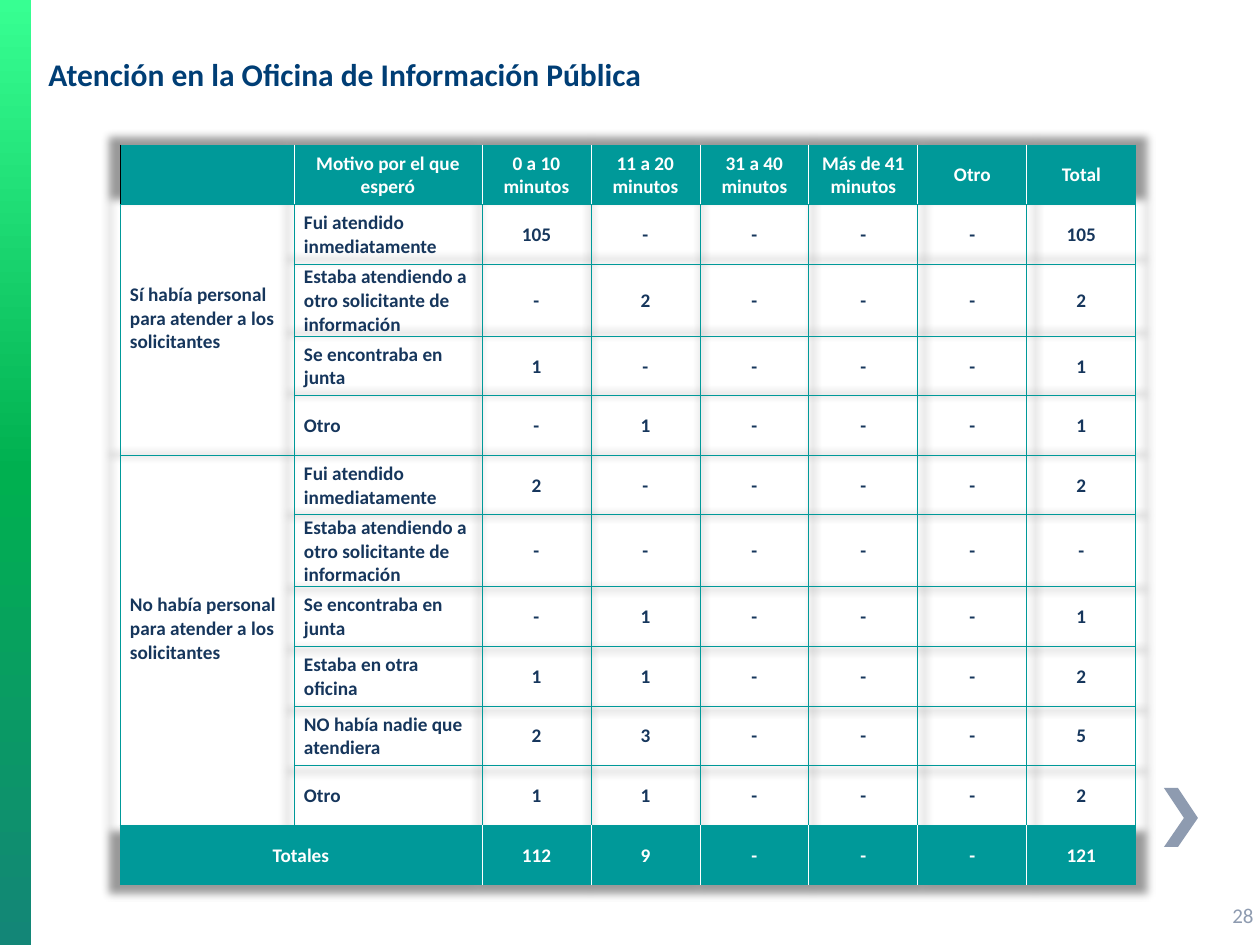
import lxml.etree
import pptx
import pptx.dml.color
import pptx.enum.text
import pptx.oxml
import pptx.oxml.ns
import pptx.util

PX = 9144000 // 1260
COLORS = {"teal": "009999", "white": "FFFFFF", "black": "000000", "navy": "16365C",
          "title": "003E75", "muted": "8E9BB0"}
BAND = [(0, "37FF92"), (50, "00B050"), (100, "138677")]
FONT = "Calibri"
NS = pptx.oxml.ns.nsdecls("a")
MIDDLE = pptx.enum.text.MSO_ANCHOR.MIDDLE
CENTER = pptx.enum.text.PP_ALIGN.CENTER

HEADERS = ["", "Motivo por el que esperó", "0 a 10 minutos", "11 a 20 minutos",
           "31 a 40 minutos", "Más de 41 minutos", "Otro", "Total"]
# Each group: label, then (reason, 0-10 min, 11-20 min, total)
GROUPS = [
    ("Sí había personal para atender a los solicitantes", [
        ("Fui atendido inmediatamente", "105", "-", "105"),
        ("Estaba atendiendo a otro solicitante de información", "-", "2", "2"),
        ("Se encontraba en junta", "1", "-", "1"),
        ("Otro", "-", "1", "1")]),
    ("No había personal para atender a los solicitantes", [
        ("Fui atendido inmediatamente", "2", "-", "2"),
        ("Estaba atendiendo a otro solicitante de información", "-", "-", "-"),
        ("Se encontraba en junta", "-", "1", "1"),
        ("Estaba en otra oficina", "1", "1", "2"),
        ("NO había nadie que atendiera", "2", "3", "5"),
        ("Otro", "1", "1", "2")]),
]
TOTALS = ("Totales", "", "112", "9", "-", "-", "-", "121")
COL_WIDTHS = [174, 188] + [109] * 6


def rgb(name):
    return pptx.dml.color.RGBColor.from_string(COLORS[name])


def style(p, size, color, bold=False):
    for r in p.runs:
        r.font.name, r.font.size, r.font.bold = FONT, pptx.util.Pt(size), bold
        r.font.color.rgb = rgb(color)


def add_text(s, box, text, size, color, bold=False):
    tf = s.shapes.add_textbox(*[v * PX for v in box]).text_frame
    tf.word_wrap = True
    tf.vertical_anchor = MIDDLE
    tf.text = text
    style(tf.paragraphs[0], size, color, bold)


def add_band(s, box):
    """Vertical gradient strip on the left edge."""
    sp = s.shapes.add_shape(pptx.enum.shapes.MSO_SHAPE.RECTANGLE, *[v * PX for v in box])
    sp.shadow.inherit = False
    sp.line.fill.background()
    stops = "".join(f'<a:gs pos="{pos * 1000}"><a:srgbClr val="{c}"/></a:gs>' for pos, c in BAND)
    fill = pptx.oxml.parse_xml(f'<a:gradFill {NS}><a:gsLst>{stops}</a:gsLst>'
                               '<a:lin ang="5400000" scaled="0"/></a:gradFill>')
    sp.element.spPr.find(pptx.oxml.ns.qn("a:prstGeom")).addnext(fill)


def add_chevron(s, box):
    x, y, w, h = box
    arm = 14
    points = [(x, y), (x + w - arm, y + h / 2), (x, y + h), (x + arm, y + h), (x + w, y + h / 2)]
    fb = s.shapes.build_freeform(x + arm, y, scale=PX)
    fb.add_line_segments(points, close=True)
    sp = fb.convert_to_shape()
    sp.shadow.inherit = False
    sp.fill.solid()
    sp.fill.fore_color.rgb = rgb("muted")
    sp.line.fill.background()


def set_borders(cell, left, right):
    tcPr = cell._tc.get_or_add_tcPr()
    sides = {"lnL": left, "lnR": right, "lnT": "teal", "lnB": "teal"}
    for i, (side, color) in enumerate(sides.items()):
        tcPr.insert(i, pptx.oxml.parse_xml(
            f'<a:{side} {NS} w="6350"><a:solidFill><a:srgbClr val="{COLORS[color]}"/>'
            f'</a:solidFill></a:{side}>'))


def fill_cell(cell, text, col, strong, grouped):
    centred = strong or col > 1
    cell.margin_left = cell.margin_right = (1 if centred else 10) * PX
    cell.margin_top = PX
    cell.margin_bottom = 24 * PX if grouped else 0  # group labels sit one half line high
    cell.vertical_anchor = MIDDLE
    cell.text = text
    p = cell.text_frame.paragraphs[0]
    if centred:
        p.alignment = CENTER
    style(p, 11, "white" if strong else "navy", True)
    if strong:
        cell.fill.solid()
        cell.fill.fore_color.rgb = rgb("teal")
    else:
        cell.fill.background()


def add_waiting_table(s, box):
    rows = [HEADERS]
    for label, reasons in GROUPS:
        for i, (reason, short, medium, total) in enumerate(reasons):
            rows.append([label if i == 0 else "", reason, short, medium, "-", "-", "-", total])
    rows.append(TOTALS)
    last, last_col = len(rows) - 1, len(HEADERS) - 1

    table = s.shapes.add_table(len(rows), len(HEADERS), *[v * PX for v in box]).table
    table.first_row = table.horz_banding = False
    for column, width in zip(table.columns, COL_WIDTHS):
        column.width = width * PX
    # Three-line rows are 72 px; the others share what is left
    tall = [r for r, row in enumerate(rows) if len(row[1]) > 40]
    for r, row in enumerate(table.rows):
        row.height = 72 * PX if r in tall else (box[3] - 72 * len(tall)) * PX // (len(rows) - len(tall))

    for r, values in enumerate(rows):
        strong = r in (0, last)
        inner = "white" if strong else "teal"
        for c, text in enumerate(values):
            cell = table.cell(r, c)
            fill_cell(cell, text, c, strong, c == 0 and not strong)
            left = "black" if r == c == 0 else "teal" if c == 0 else inner
            set_borders(cell, left, "teal" if c == last_col else inner)

    # Merged group labels and totals label
    top = 1
    for _, reasons in GROUPS:
        table.cell(top, 0).merge(table.cell(top + len(reasons) - 1, 0))
        top += len(reasons)
    table.cell(last, 0).merge(table.cell(last, 1))

    # Soft shadow all around
    table._tbl.tblPr.insert(0, pptx.oxml.parse_xml(
        f'<a:effectLst {NS}><a:outerShdw blurRad="63500" sx="102000" sy="102000" algn="ctr" '
        'rotWithShape="0"><a:prstClr val="black"><a:alpha val="40000"/></a:prstClr>'
        '</a:outerShdw></a:effectLst>'))


def main():
    prs = pptx.Presentation()
    prs.slide_width, prs.slide_height = pptx.util.Inches(10), pptx.util.Inches(7.5)
    s = prs.slides.add_slide(prs.slide_layouts[6])
    add_band(s, (0, 0, 31, 945))
    add_chevron(s, (1164, 788, 34, 59))
    add_text(s, (1220, 890, 53, 50), "28", 12, "muted")
    add_text(s, (36, 15, 1171, 118), "Atención en la Oficina de Información Pública", 18, "title", True)
    add_waiting_table(s, (120, 145, 1016, 740))
    prs.save("out.pptx")


if __name__ == "__main__":
    main()
